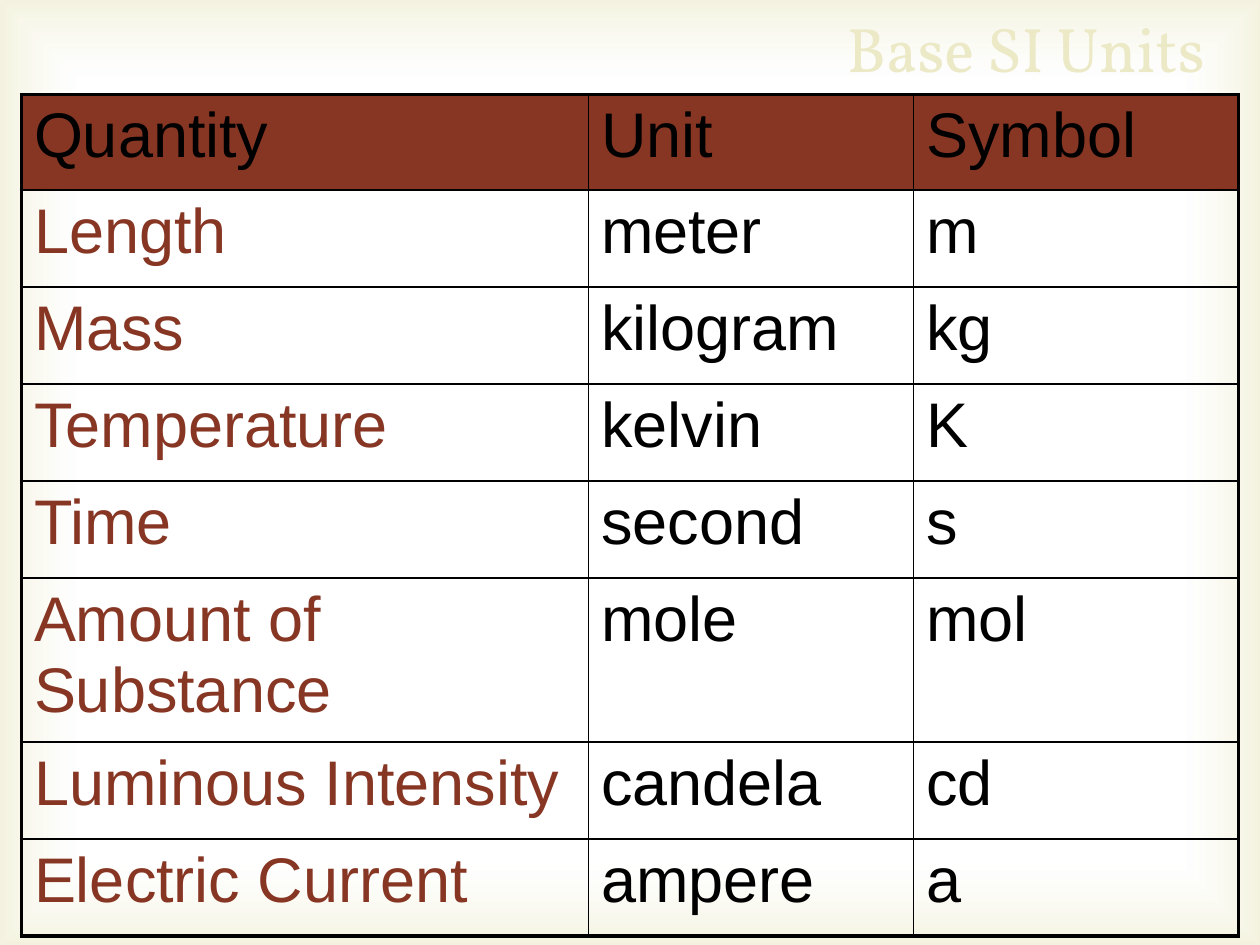
import pptx
import pptx.dml.color
import pptx.enum.shapes
import pptx.enum.text
import pptx.oxml
import pptx.oxml.ns
import pptx.util
from pptx.util import Inches, Pt

TITLE = "Base SI Units"
ROWS = [
    ("Quantity", "Unit", "Symbol"),
    ("Length", "meter", "m"),
    ("Mass", "kilogram", "kg"),
    ("Temperature", "kelvin", "K"),
    ("Time", "second", "s"),
    ("Amount of Substance", "mole", "mol"),
    ("Luminous Intensity", "candela", "cd"),
    ("Electric Current", "ampere", "a"),
]
WIDTHS = [4.5, 2.58, 2.58]
HEIGHTS = [0.76] + [0.77] * 4 + [1.12] + [0.77] * 2
RED, BLACK, CREAM = "873624", "000000", "ECE9C6"
THIN, THICK = 1, 2.25
NS = pptx.oxml.ns.nsdecls("a")
GLOW = f"""<a:gradFill {NS} rotWithShape="1"><a:gsLst>
<a:gs pos="83000"><a:srgbClr val="FFFFFF"><a:alpha val="11000"/></a:srgbClr></a:gs>
<a:gs pos="100000"><a:srgbClr val="D1CA75"><a:alpha val="23000"/></a:srgbClr></a:gs>
</a:gsLst><a:path path="rect"><a:fillToRect l="50000" t="50000" r="50000" b="50000"/>
</a:path></a:gradFill>"""


def color(code):
    return pptx.dml.color.RGBColor.from_string(code)


def style(para, font, code):
    para.font.name = font
    para.font.size = Pt(36)
    para.font.color.rgb = color(code)


def edge(cell, sides):
    """Draw cell borders; sides maps L, R, T, B to widths in points."""
    props = cell._tc.get_or_add_tcPr()
    for spot, side in enumerate("LRTB"):
        props.insert(spot, pptx.oxml.parse_xml(
            f'<a:ln{side} {NS} w="{Pt(sides[side])}"><a:solidFill>'
            f'<a:srgbClr val="{BLACK}"/></a:solidFill></a:ln{side}>'))


deck = pptx.Presentation()
deck.slide_width, deck.slide_height = Inches(10), Inches(7.5)
slide = deck.slides.add_slide(deck.slide_layouts[6])

glow = slide.shapes.add_shape(
    pptx.enum.shapes.MSO_SHAPE.RECTANGLE, 0, 0, deck.slide_width, deck.slide_height)
glow.shadow.inherit = False
glow.line.fill.background()
glow._element.spPr.find(pptx.oxml.ns.qn("a:prstGeom")).addnext(
    pptx.oxml.parse_xml(GLOW))

title = slide.shapes.add_textbox(Inches(5.08), 0, Inches(4.58), Inches(0.75))
frame = title.text_frame
frame.word_wrap = True
frame.vertical_anchor = pptx.enum.text.MSO_ANCHOR.MIDDLE
frame.text = TITLE
frame.paragraphs[0].alignment = pptx.enum.text.PP_ALIGN.RIGHT
style(frame.paragraphs[0], "Vollkorn", CREAM)

table = slide.shapes.add_table(
    len(ROWS), len(WIDTHS), Inches(0.17), Inches(0.75),
    Inches(sum(WIDTHS)), Inches(sum(HEIGHTS))).table
table.horz_banding = False
for col, width in zip(table.columns, WIDTHS):
    col.width = Inches(width)
for row, height in zip(table.rows, HEIGHTS):
    row.height = Inches(height)

end, last = len(ROWS) - 1, len(WIDTHS) - 1
for r, words in enumerate(ROWS):
    for c, word in enumerate(words):
        cell = table.cell(r, c)
        cell.text = word
        para = cell.text_frame.paragraphs[0]
        para.space_before = Pt(7.2)
        para.font.bold = False
        style(para, "Arial", RED if r and c == 0 else BLACK)
        if r == 0:
            cell.fill.solid()
            cell.fill.fore_color.rgb = color(RED)
        else:
            cell.fill.background()
        outer = {"L": c == 0, "R": c == last, "T": r == 0, "B": r == end}
        edge(cell, {side: THICK if out else THIN for side, out in outer.items()})

deck.save("out.pptx")
